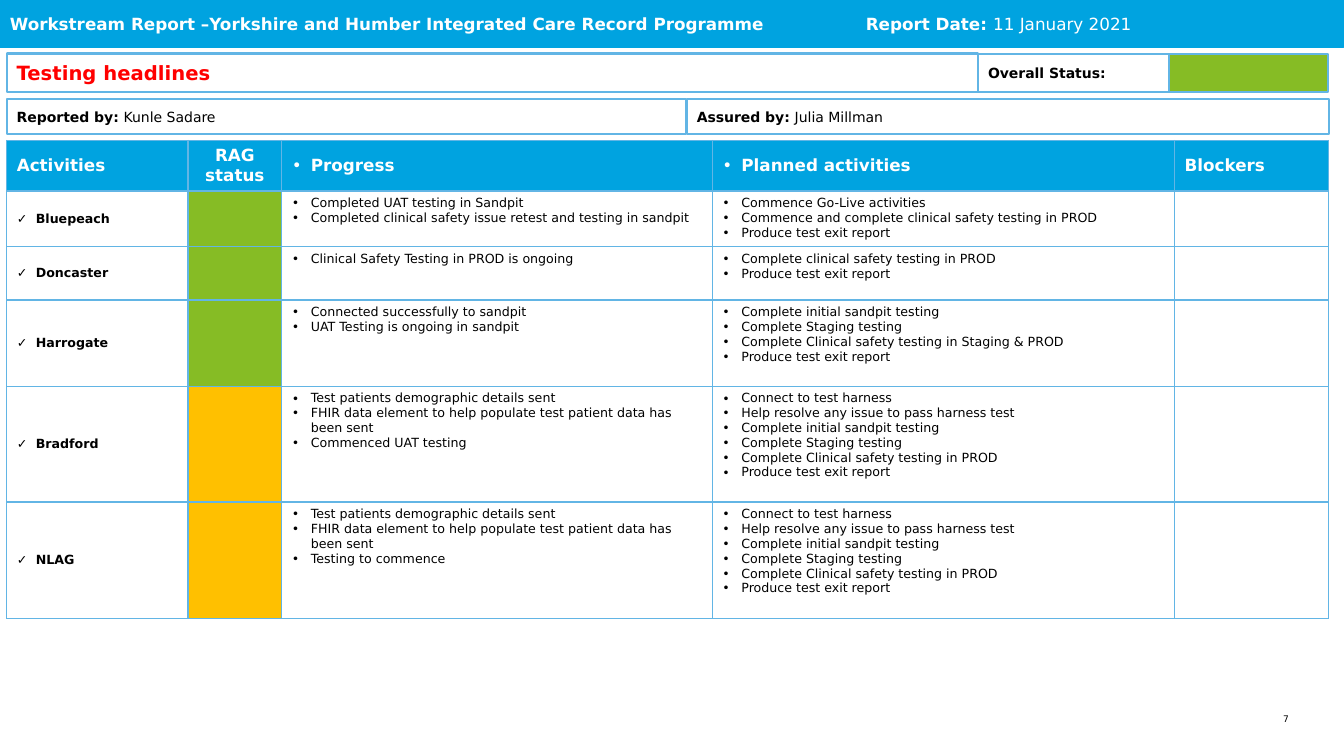
from dataclasses import dataclass

import lxml.etree
import pptx
import pptx.dml.color
import pptx.enum.shapes
import pptx.enum.text
import pptx.oxml.ns
import pptx.util

Cm = pptx.util.Cm
Pt = pptx.util.Pt
qn = pptx.oxml.ns.qn
ALIGN = pptx.enum.text.PP_ALIGN
ANCHOR = pptx.enum.text.MSO_ANCHOR

FONT = "DejaVu Sans"
COLORS = {
    "blue": "00A3E0",
    "edge": "62B5E5",
    "green": "86BC25",
    "amber": "FFC000",
    "red": "FF0000",
    "white": "FFFFFF",
    "black": "000000",
}


@dataclass
class Panel:
    left: float
    top: float
    width: float
    height: float
    fill: str = "white"
    edge: str = "edge"
    weight: float = 1.5
    label: str = ""
    value: str = ""
    size: float = 10
    ink: str = "black"
    tab: float = 0


@dataclass
class Site:
    name: str
    status: str
    height: float
    done: list[str]
    plans: list[str]


PANELS = [
    Panel(0, 0, 33.87, 1.19, "blue", "blue", 0.75,
          "Workstream Report –Yorkshire and Humber Integrated Care Record Programme\tReport Date: ",
          "11 January 2021", 12, "white", 21.57),
    Panel(0.17, 2.49, 17.13, 0.89, label="Reported by: ", value="Kunle Sadare"),
    Panel(0.17, 1.35, 24.48, 0.98, label="Testing headlines", size=14, ink="red"),
    Panel(24.65, 1.37, 4.82, 0.96, label="Overall Status:"),
    Panel(29.46, 1.37, 4.02, 0.95, fill="green"),
    Panel(17.31, 2.49, 16.18, 0.89, label="Assured by: ", value="Julia Millman"),
]

EXIT = "Produce test exit report"
STAGES = ["Complete initial sandpit testing", "Complete Staging testing"]
HARNESS = [
    "Connect to test harness",
    "Help resolve any issue to pass harness test",
    *STAGES,
    "Complete Clinical safety testing in PROD",
    EXIT,
]
PATIENTS = [
    "Test patients demographic details sent",
    "FHIR data element to help populate test patient data has been sent",
]
SITES = [
    Site("Bluepeach", "green", 1.41,
         ["Completed UAT testing in Sandpit",
          "Completed clinical safety issue retest and testing in sandpit"],
         ["Commence Go-Live activities",
          "Commence and complete clinical safety testing in PROD", EXIT]),
    Site("Doncaster", "green", 1.34,
         ["Clinical Safety Testing in PROD is ongoing"],
         ["Complete clinical safety testing in PROD", EXIT]),
    Site("Harrogate", "green", 2.17,
         ["Connected successfully to sandpit", "UAT Testing is ongoing in sandpit"],
         [*STAGES, "Complete Clinical safety testing in Staging & PROD", EXIT]),
    Site("Bradford", "amber", 2.92, [*PATIENTS, "Commenced UAT testing"], HARNESS),
    Site("NLAG", "amber", 2.94, [*PATIENTS, "Testing to commence"], HARNESS),
]
HEADS = ["Activities", "RAG status", "Progress", "Planned activities", "Blockers"]
WIDTHS = [4.57, 2.36, 10.85, 11.65, 3.88]
HEAD_HEIGHT = 1.26


def color(name: str) -> pptx.dml.color.RGBColor:
    return pptx.dml.color.RGBColor.from_string(COLORS[name])


def style(run, size: float, ink: str, bold: bool) -> None:
    run.font.name = FONT
    run.font.size = Pt(size)
    run.font.bold = bold
    run.font.color.rgb = color(ink)


def add_tab(para, stop: float) -> None:
    tabs = lxml.etree.SubElement(para._p.get_or_add_pPr(), qn("a:tabLst"))
    lxml.etree.SubElement(tabs, qn("a:tab"), pos=str(Cm(stop)), algn="l")


def add_mark(para, mark: str) -> None:
    """Give the paragraph a hanging bullet."""
    props = para._p.get_or_add_pPr()
    props.set("marL", str(Cm(0.48)))
    props.set("indent", str(Cm(-0.48)))
    lxml.etree.SubElement(props, qn("a:buFont"), typeface=FONT)
    lxml.etree.SubElement(props, qn("a:buChar"), char=mark)


def add_panel(slide, panel: Panel) -> None:
    box = slide.shapes.add_shape(
        pptx.enum.shapes.MSO_SHAPE.RECTANGLE,
        Cm(panel.left), Cm(panel.top), Cm(panel.width), Cm(panel.height))
    box.shadow.inherit = False
    box.fill.solid()
    box.fill.fore_color.rgb = color(panel.fill)
    box.line.color.rgb = color(panel.edge)
    box.line.width = Pt(panel.weight)
    frame = box.text_frame
    frame.word_wrap = True
    frame.vertical_anchor = ANCHOR.MIDDLE
    para = frame.paragraphs[0]
    para.alignment = ALIGN.LEFT
    if panel.tab:
        add_tab(para, panel.tab)
    for text, bold in ((panel.label, True), (panel.value, False)):
        if text:
            run = para.add_run()
            run.text = text
            style(run, panel.size, panel.ink, bold)


def add_edges(cell) -> None:
    props = cell._tc.get_or_add_tcPr()
    for side in ("lnL", "lnR", "lnT", "lnB"):
        line = lxml.etree.SubElement(props, qn(f"a:{side}"), w=str(Pt(1)))
        fill = lxml.etree.SubElement(line, qn("a:solidFill"))
        lxml.etree.SubElement(fill, qn("a:srgbClr"), val=COLORS["edge"])


def fill_cell(cell, lines: list[str], mark: str = "", size: float = 9,
              ink: str = "black", bold: bool = False, fill: str = "white") -> None:
    add_edges(cell)
    cell.fill.solid()
    cell.fill.fore_color.rgb = color(fill)
    cell.vertical_anchor = ANCHOR.MIDDLE if bold else ANCHOR.TOP
    cell.text_frame.text = "\n".join(lines)
    for para in cell.text_frame.paragraphs:
        if mark:
            add_mark(para, mark)
        for run in para.runs:
            style(run, size, ink, bold)


def add_grid(slide) -> None:
    heights = [HEAD_HEIGHT] + [site.height for site in SITES]
    grid = slide.shapes.add_table(
        len(heights), len(WIDTHS), Cm(0.17), Cm(3.54),
        Cm(sum(WIDTHS)), Cm(sum(heights))).table
    grid.horz_banding = False
    for column, width in zip(grid.columns, WIDTHS):
        column.width = Cm(width)
    for row, height in zip(grid.rows, heights):
        row.height = Cm(height)
    for col, head in enumerate(HEADS):
        mark = "•" if col in (2, 3) else ""
        fill_cell(grid.cell(0, col), [head], mark, 12, "white", True, "blue")
    grid.cell(0, 1).text_frame.paragraphs[0].alignment = ALIGN.CENTER
    for row, site in enumerate(SITES, 1):
        fill_cell(grid.cell(row, 0), [site.name], "✓", bold=True)
        fill_cell(grid.cell(row, 1), [], fill=site.status)
        fill_cell(grid.cell(row, 2), site.done, "•")
        fill_cell(grid.cell(row, 3), site.plans, "•")
        fill_cell(grid.cell(row, 4), [])


def add_number(slide) -> None:
    frame = slide.shapes.add_textbox(Cm(31.62), Cm(17.98), Cm(0.86), Cm(0.28)).text_frame
    frame.word_wrap = True
    frame.margin_left = frame.margin_right = frame.margin_top = frame.margin_bottom = 0
    frame.text = "7"
    para = frame.paragraphs[0]
    para.alignment = ALIGN.RIGHT
    style(para.runs[0], 6.5, "black", False)


def main() -> None:
    deck = pptx.Presentation()
    deck.slide_width = Cm(33.87)
    deck.slide_height = Cm(19.05)
    slide = deck.slides.add_slide(deck.slide_layouts[6])
    add_number(slide)
    for panel in PANELS:
        add_panel(slide, panel)
    add_grid(slide)
    deck.save("out.pptx")


if __name__ == "__main__":
    main()
